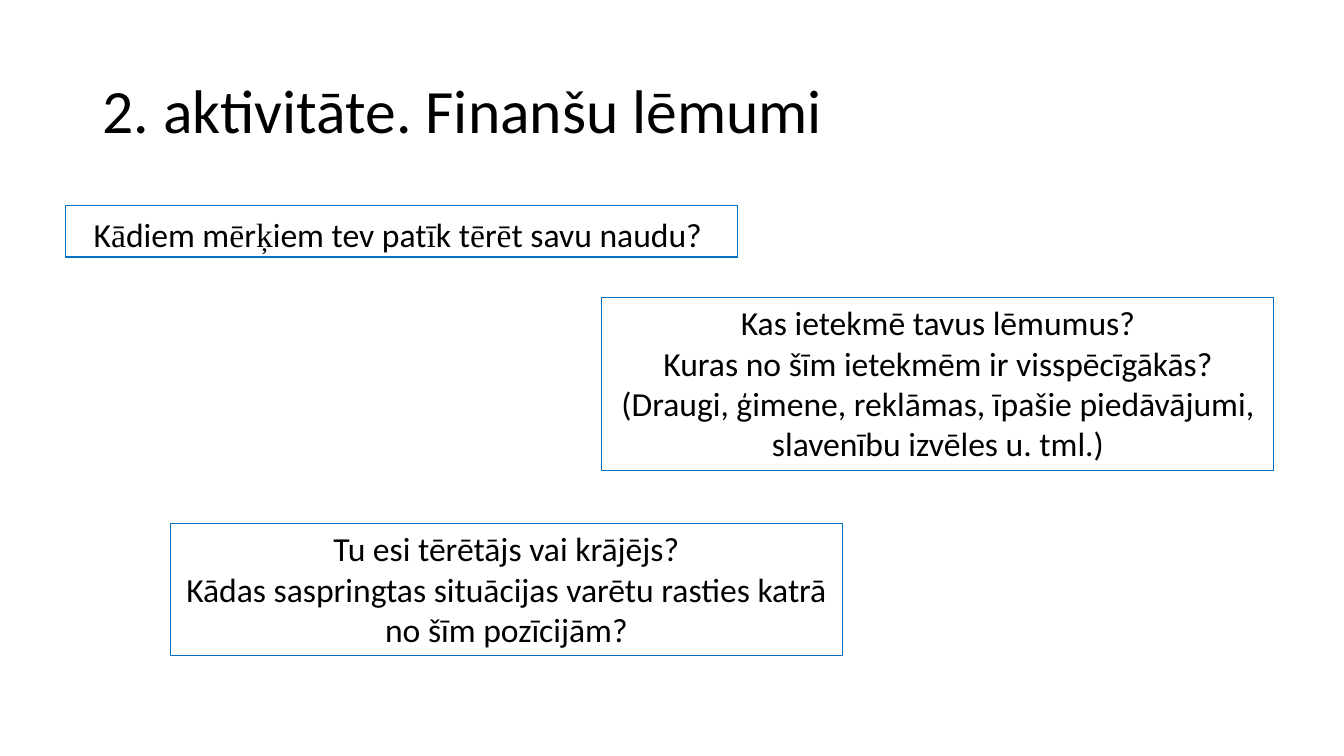
from itertools import groupby

from pptx import Presentation
from pptx import util as u
from pptx.dml.color import RGBColor
from pptx.enum import shapes, text

COLOURS = {"ink": "000000", "outline": "0070C0"}
BODY_FONT, ACCENT_FONT = "Calibri", "Times New Roman"
QUESTION_WIDTH = 50


def colour(name):
    return RGBColor.from_string(COLOURS[name])


class Page:
    """Holds the slide and its style; lengths are percentages of the slide's size."""

    def __init__(self, deck):
        self.deck = deck
        self.slide = deck.slides.add_slide(deck.slide_layouts[6])

    def place(self, left, top, width, height):
        across, down = self.deck.slide_width / 100, self.deck.slide_height / 100
        return [round(share * unit) for share, unit
                in zip((left, top, width, height), (across, down, across, down))]

    def fill_text(self, box, lines, size, frame_format, para_format, accent_font=BODY_FONT):
        """Fill a box, setting letters beyond ASCII in accent_font."""
        frame = box.text_frame
        for key, value in {"word_wrap": True, **frame_format}.items():
            setattr(frame, key, value)
        for index, line in enumerate(lines):
            para = frame.add_paragraph() if index else frame.paragraphs[0]
            for key, value in para_format.items():
                setattr(para, key, value)
            fonts = groupby(line, lambda letter: BODY_FONT if letter.isascii() else accent_font)
            for font_name, letters in fonts:
                span = para.add_run()
                span.text = "".join(letters)
                for key, value in {"name": font_name, "size": u.Pt(size)}.items():
                    setattr(span.font, key, value)
                span.font.color.rgb = colour("ink")

    def title(self, line, *place):
        box = self.slide.shapes.add_textbox(*self.place(*place))
        self.fill_text(box, [line], 44, {"vertical_anchor": text.MSO_ANCHOR.MIDDLE},
                       {"line_spacing": 0.9})

    def question(self, lines, left, top, height, accent_font=BODY_FONT, **spacing):
        box = self.slide.shapes.add_shape(
            shapes.MSO_SHAPE.RECTANGLE, *self.place(left, top, QUESTION_WIDTH, height))
        box.shadow.inherit = False
        box.fill.background()
        box.line.color.rgb = colour("outline")
        box.line.width = u.Pt(0.75)
        self.fill_text(box, lines, 24,
                       {"vertical_anchor": text.MSO_ANCHOR.TOP,
                        "auto_size": text.MSO_AUTO_SIZE.SHAPE_TO_FIT_TEXT},
                       {"alignment": text.PP_ALIGN.CENTER, **spacing}, accent_font)


def main():
    deck = Presentation()
    deck.slide_width, deck.slide_height = u.Inches(13.33), u.Inches(7.5)
    page = Page(deck)
    page.title("2. aktivitāte. Finanšu lēmumi", 6.9, 5.33, 86.27, 19.33)
    page.question(["Kādiem mērķiem tev patīk tērēt savu naudu? "], 4.88, 27.2, 6.8,
                  ACCENT_FONT, line_spacing=1.07, space_after=u.Pt(8))
    page.question(["Kas ietekmē tavus lēmumus?",
                   "Kuras no šīm ietekmēm ir visspēcīgākās? (Draugi, ģimene, reklāmas, "
                   "īpašie piedāvājumi, slavenību izvēles u. tml.)"], 44.79, 39.33, 22.93)
    page.question(["Tu esi tērētājs vai krājējs?",
                   "Kādas saspringtas situācijas varētu rasties katrā no šīm pozīcijām?"],
                  12.68, 69.2, 17.47)
    deck.save("out.pptx")


if __name__ == "__main__":
    main()
